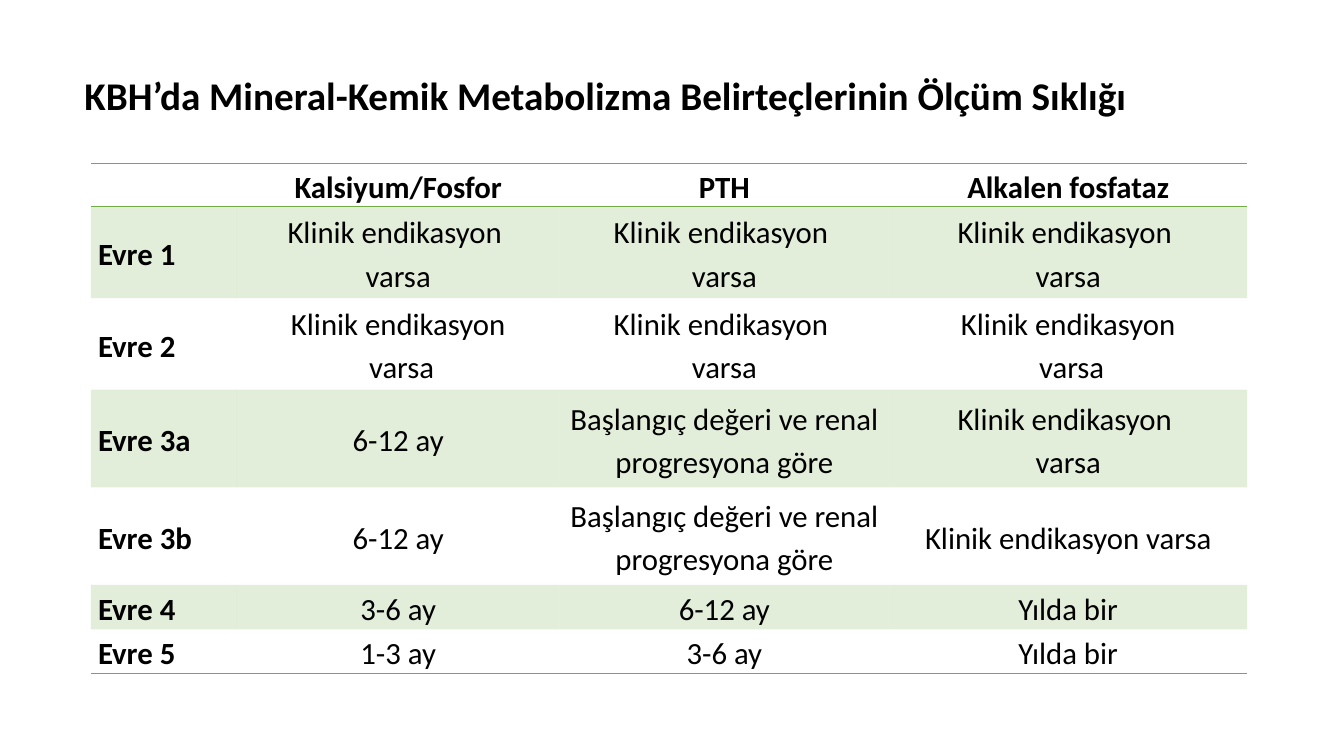
from lxml import etree
from pptx import Presentation
from pptx.dml.color import RGBColor
from pptx.enum.text import MSO_ANCHOR, PP_ALIGN
from pptx.oxml.ns import qn
from pptx.util import Cm, Pt

MIDDLE = MSO_ANCHOR.MIDDLE
LEFT, CENTER = PP_ALIGN.LEFT, PP_ALIGN.CENTER
COLORS = {"text": "000000", "green": "70AD47"}
FONT = "Calibri"
PLAIN_TABLE_STYLE = "{2D5ABB26-0587-4C30-8999-92F81FD0307C}"

TITLE = "KBH’da Mineral-Kemik Metabolizma Belirteçlerinin Ölçüm Sıklığı"
IF_INDICATED = "Klinik endikasyon \nvarsa"
IF_INDICATED_STAGE_2 = "Klinik endikasyon\n varsa"
BY_PROGRESSION = "Başlangıç değeri ve renal progresyona göre"
SCHEDULE = [
    ("", "Kalsiyum/Fosfor", "PTH", "Alkalen fosfataz"),
    ("Evre 1", IF_INDICATED, IF_INDICATED, IF_INDICATED),
    ("Evre 2", IF_INDICATED_STAGE_2, IF_INDICATED, IF_INDICATED_STAGE_2),
    ("Evre 3a", "6-12 ay", BY_PROGRESSION, IF_INDICATED),
    ("Evre 3b", "6-12 ay", BY_PROGRESSION, "Klinik endikasyon varsa"),
    ("Evre 4", "3-6 ay", "6-12 ay", "Yılda bir"),
    ("Evre 5", "1-3 ay", "3-6 ay", "Yılda bir"),
]
COLUMN_WIDTHS = [3.68, 8.13, 8.31, 9.02]
ROW_HEIGHTS = [1.09, 2.31, 2.31, 2.46, 2.46, 1.12, 1.12]


def format_font(font, size, bold):
    font.name = FONT
    font.size = Pt(size)
    font.bold = bold
    font.color.rgb = RGBColor.from_string(COLORS["text"])


def add_border(cell, side):
    properties = cell._tc.get_or_add_tcPr()
    border = etree.SubElement(properties, qn(f"a:{side}"), w=str(Pt(1)))
    fill = etree.SubElement(border, qn("a:solidFill"))
    etree.SubElement(fill, qn("a:srgbClr"), val=COLORS["green"])


def shade(cell):
    cell.fill.solid()
    cell.fill.fore_color.rgb = RGBColor.from_string(COLORS["green"])
    color = cell._tc.tcPr.find(f"{qn('a:solidFill')}/{qn('a:srgbClr')}")
    etree.SubElement(color, qn("a:alpha"), val="20000")


def fill_cell(cell, content, bold, alignment):
    cell.margin_left = cell.margin_right = Cm(0.18)
    cell.margin_top = cell.margin_bottom = 0
    cell.vertical_anchor = MIDDLE
    cell.text_frame.text = content
    for paragraph in cell.text_frame.paragraphs:
        paragraph.alignment = alignment
        paragraph.line_spacing = 1.15
        format_font(paragraph.font, 22, bold)
        for run in paragraph.runs:
            format_font(run.font, 22, bold)


def add_title(slide, left, top, width, height):
    title = slide.shapes.add_textbox(Cm(left), Cm(top), Cm(width), Cm(height))
    title.text_frame.word_wrap = True
    title.text_frame.text = TITLE
    format_font(title.text_frame.paragraphs[0].runs[0].font, 28, True)


def add_schedule(slide, left, top):
    frame = slide.shapes.add_table(
        len(SCHEDULE), len(COLUMN_WIDTHS), Cm(left), Cm(top),
        Cm(sum(COLUMN_WIDTHS)), Cm(sum(ROW_HEIGHTS)))
    schedule = frame.table
    style = next(frame._element.iter(qn("a:tableStyleId")))
    style.text = PLAIN_TABLE_STYLE
    for column, width in zip(schedule.columns, COLUMN_WIDTHS):
        column.width = Cm(width)
    last = len(SCHEDULE) - 1
    for r, (stage, height) in enumerate(zip(SCHEDULE, ROW_HEIGHTS)):
        schedule.rows[r].height = Cm(height)
        for c, content in enumerate(stage):
            cell = schedule.cell(r, c)
            fill_cell(cell, content, r == 0 or c == 0, CENTER if c else LEFT)
            if r == 0:
                add_border(cell, "lnT")
            if r in (0, last):
                add_border(cell, "lnB")
            if r % 2:
                shade(cell)
            else:
                cell.fill.background()


def main():
    presentation = Presentation()
    presentation.slide_width = Cm(33.87)
    presentation.slide_height = Cm(19.05)
    slide = presentation.slides.add_slide(presentation.slide_layouts[6])
    add_title(slide, 1.88, 1.68, 27.71, 1.45)
    add_schedule(slide, 2.29, 4.11)
    presentation.save("out.pptx")


if __name__ == "__main__":
    main()
